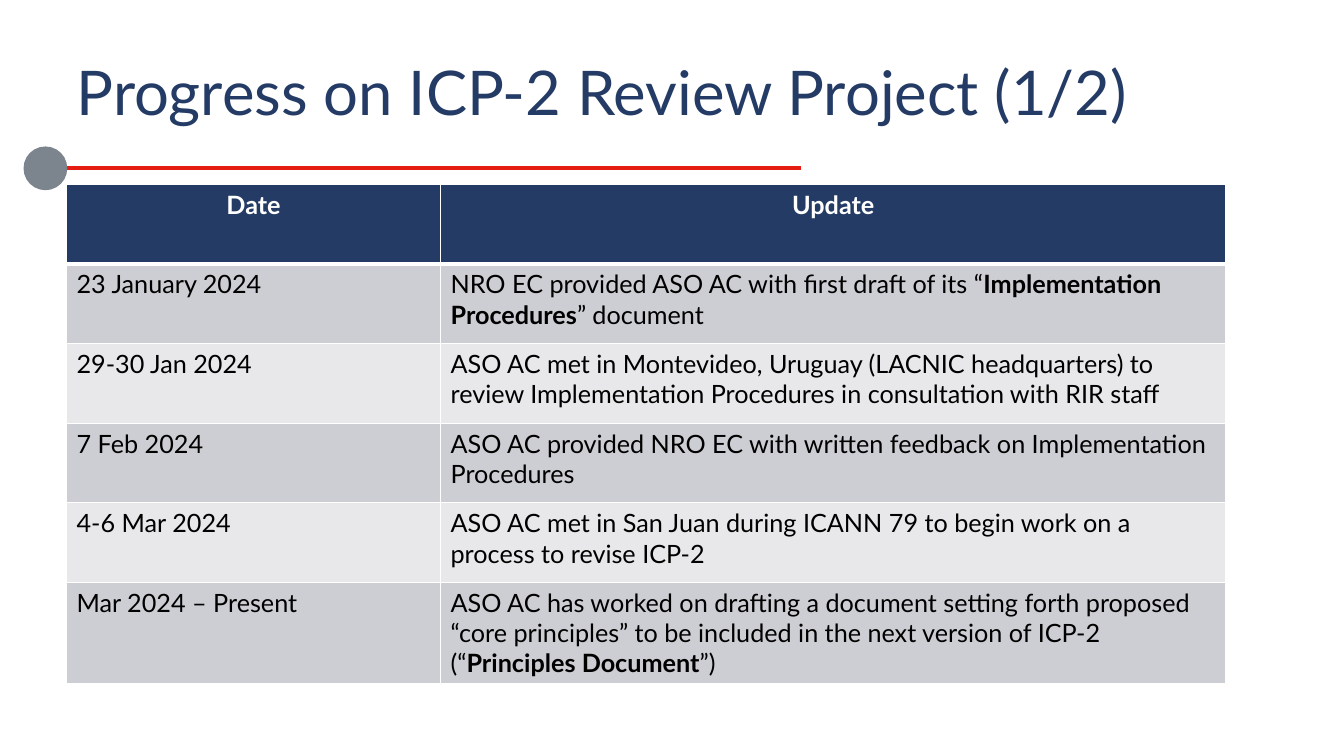
from dataclasses import dataclass

from lxml import etree
from pptx import Presentation
from pptx import util as u
from pptx.dml.color import RGBColor
from pptx.enum import shapes, text
from pptx.oxml import ns

NAVY = RGBColor(0x24, 0x3B, 0x65)
RED = RGBColor(0xE4, 0x1C, 0x11)
GREY = RGBColor(0x7C, 0x84, 0x8D)
DARK_BAND = RGBColor(0xCD, 0xCE, 0xD3)
LIGHT_BAND = RGBColor(0xE8, 0xE8, 0xEA)
WHITE = RGBColor(0xFF, 0xFF, 0xFF)
BLACK = RGBColor(0x00, 0x00, 0x00)

TITLE_FORMAT = {"name": "Lato", "size": u.Pt(44), "bold": False}
CELL_FORMAT = {"name": "Lato", "size": u.Pt(18)}
COLUMN_WIDTHS = (3.71, 7.79)
ROW_HEIGHT = 0.79


@dataclass(frozen=True)
class Segment:
    wording: str
    bold: bool = False


@dataclass(frozen=True)
class Update:
    date: str
    segments: tuple[Segment, ...]


UPDATES = (
    Update("23 January 2024", (
        Segment("NRO EC provided ASO AC with first draft of its “"),
        Segment("Implementation Procedures", True),
        Segment("” document"),
    )),
    Update("29-30 Jan 2024", (
        Segment("ASO AC met in Montevideo, Uruguay (LACNIC headquarters) to review "
                "Implementation Procedures in consultation with RIR staff"),
    )),
    Update("7 Feb 2024", (
        Segment("ASO AC provided NRO EC with written feedback on Implementation Procedures"),
    )),
    Update("4-6 Mar 2024", (
        Segment("ASO AC met in San Juan during ICANN 79 to begin work on a process to revise ICP-2"),
    )),
    Update("Mar 2024 – Present", (
        Segment("ASO AC has worked on drafting a document setting forth proposed “core principles” "
                "to be included in the next version of ICP-2 (“"),
        Segment("Principles Document", True),
        Segment("”)"),
    )),
)


def add_run(paragraph, wording: str, color: RGBColor, formats: dict) -> None:
    run = paragraph.add_run()
    run.text = wording
    for attribute, value in formats.items():
        setattr(run.font, attribute, value)
    run.font.color.rgb = color


def add_border(cell, side: str, points: float) -> None:
    properties = cell._tc.get_or_add_tcPr()
    border = etree.SubElement(properties, ns.qn(f"a:ln{side}"), w=str(u.Pt(points)))
    fill = etree.SubElement(border, ns.qn("a:solidFill"))
    etree.SubElement(fill, ns.qn("a:srgbClr"), val=str(WHITE))


def fill_cell(cell, segments: tuple[Segment, ...], background: RGBColor,
              color: RGBColor, alignment, top: float, bottom: float) -> None:
    for side, points in (("L", 1), ("R", 1), ("T", top), ("B", bottom)):
        add_border(cell, side, points)
    cell.fill.solid()
    cell.fill.fore_color.rgb = background
    paragraph = cell.text_frame.paragraphs[0]
    paragraph.alignment = alignment
    for segment in segments:
        add_run(paragraph, segment.wording, color, {**CELL_FORMAT, "bold": segment.bold})


def add_title_rule(slide) -> None:
    rule = slide.shapes.add_connector(
        shapes.MSO_CONNECTOR.STRAIGHT,
        u.Inches(0.27), u.Inches(1.67), u.Inches(7.94), u.Inches(1.67))
    rule.line.color.rgb = RED
    rule.line.width = u.Pt(3)
    etree.SubElement(rule._element.spPr, ns.qn("a:effectLst"))
    dot = slide.shapes.add_shape(
        shapes.MSO_SHAPE.OVAL,
        u.Inches(0.24), u.Inches(1.46), u.Inches(0.42), u.Inches(0.42))
    dot.shadow.inherit = False
    dot.fill.solid()
    dot.fill.fore_color.rgb = GREY
    dot.line.color.rgb = GREY
    dot.line.width = u.Pt(1)


def format_title(slide) -> None:
    title = slide.shapes.title
    bounds = {"left": 0.66, "top": 0.22, "width": 12.14, "height": 1.45}
    for attribute, value in bounds.items():
        setattr(title, attribute, u.Inches(value))
    title.text_frame.vertical_anchor = text.MSO_ANCHOR.MIDDLE
    paragraph = title.text_frame.paragraphs[0]
    paragraph.alignment = text.PP_ALIGN.LEFT
    paragraph.line_spacing = 0.9
    add_run(paragraph, "Progress on ICP-2 Review Project (1/2)", NAVY, TITLE_FORMAT)


def add_update_table(slide) -> None:
    row_count = len(UPDATES) + 1
    table = slide.shapes.add_table(
        row_count, len(COLUMN_WIDTHS), u.Inches(0.66), u.Inches(1.83),
        u.Inches(sum(COLUMN_WIDTHS)), u.Inches(ROW_HEIGHT * row_count)).table
    for column, width in zip(table.columns, COLUMN_WIDTHS):
        column.width = u.Inches(width)
    for index, heading in enumerate(("Date", "Update")):
        fill_cell(table.cell(0, index), (Segment(heading, True),), NAVY, WHITE,
                  text.PP_ALIGN.CENTER, 1, 3)
    for row, update in enumerate(UPDATES, start=1):
        background = DARK_BAND if row % 2 else LIGHT_BAND
        top = 3 if row == 1 else 1
        for index, segments in enumerate(((Segment(update.date),), update.segments)):
            fill_cell(table.cell(row, index), segments, background, BLACK,
                      text.PP_ALIGN.LEFT, top, 1)


def main() -> None:
    presentation = Presentation()
    presentation.slide_width = u.Inches(13.33)
    presentation.slide_height = u.Inches(7.5)
    slide = presentation.slides.add_slide(presentation.slide_layouts[5])
    add_title_rule(slide)
    format_title(slide)
    add_update_table(slide)
    presentation.save("out.pptx")


if __name__ == "__main__":
    main()
